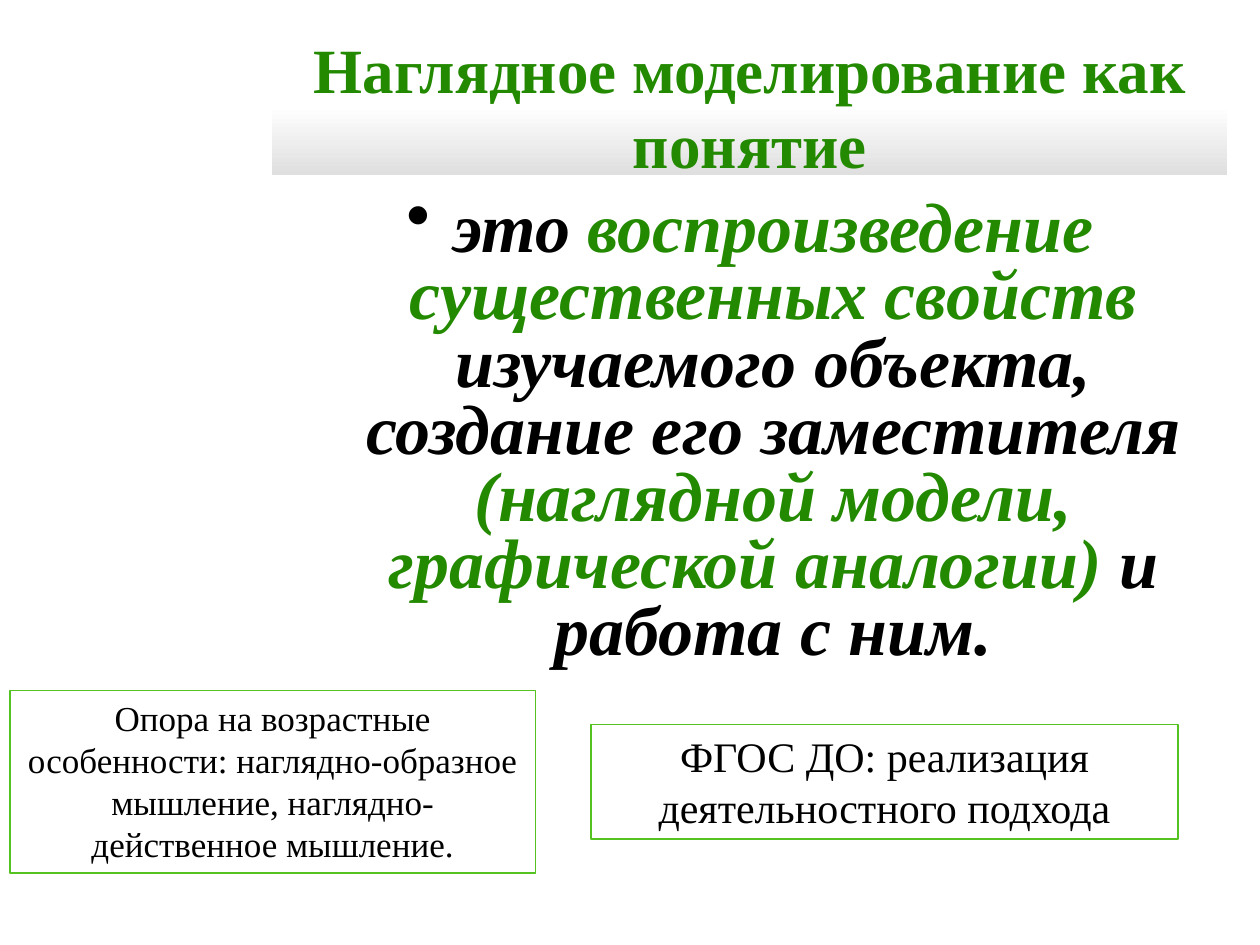
from dataclasses import dataclass

import pptx
import pptx.dml.color
import pptx.enum.shapes
import pptx.enum.text
import pptx.oxml
import pptx.oxml.ns
import pptx.util

Pt = pptx.util.Pt
RGB = pptx.dml.color.RGBColor.from_string
CENTER = pptx.enum.text.PP_ALIGN.CENTER
ANCHOR = pptx.enum.text.MSO_ANCHOR


@dataclass(frozen=True)
class Theme:
    font: str = "Times New Roman"
    ink: str = "000000"
    green: str = "238A00"
    border: str = "54C322"
    paper: str = "FFFFFF"
    shade: str = "DFDFDF"
    title: int = 36
    body: int = 40


THEME = Theme()


def style(r, size, color, bold=False, italic=False):
    r.font.name = THEME.font
    r.font.size = Pt(size)
    r.font.color.rgb = RGB(color)
    r.font.bold = bold
    r.font.italic = italic


def add_text_box(s, box, anchor):
    sp = s.shapes.add_textbox(*map(Pt, box))
    tf = sp.text_frame
    tf.word_wrap = True
    tf.vertical_anchor = anchor
    p = tf.paragraphs[0]
    p.alignment = CENTER
    return sp, p


def add_title(s, box, text):
    sp, p = add_text_box(s, box, ANCHOR.MIDDLE)
    p.text = text
    style(p.runs[0], THEME.title, THEME.green, bold=True)
    # White upper half, fading to grey at the bottom
    sp.fill.gradient()
    sp.fill.gradient_angle = 270
    stops = zip(sp.fill.gradient_stops, (0.5, 1), (THEME.paper, THEME.shade))
    for stop, position, color in stops:
        stop.position = position
        stop.color.rgb = RGB(color)


def add_definition(s, box, parts):
    sp, p = add_text_box(s, box, ANCHOR.TOP)
    p.line_spacing = 0.8
    # Hanging bullet
    pPr = p._p.get_or_add_pPr()
    pPr.set("marL", str(Pt(27)))
    pPr.set("indent", str(-Pt(27)))
    bullet = pptx.oxml.parse_xml(
        f'<a:buChar {pptx.oxml.ns.nsdecls("a")} char="•"/>')
    pPr.append(bullet)
    for text, color in parts:
        r = p.add_run()
        r.text = text
        style(r, THEME.body, color, bold=True, italic=True)


def add_note(s, box, text, size):
    sp = s.shapes.add_shape(
        pptx.enum.shapes.MSO_SHAPE.RECTANGLE, *map(Pt, box))
    sp.shadow.inherit = False
    sp.fill.solid()
    sp.fill.fore_color.rgb = RGB(THEME.paper)
    sp.line.color.rgb = RGB(THEME.border)
    sp.line.width = Pt(1)
    tf = sp.text_frame
    tf.word_wrap = True
    tf.auto_size = pptx.enum.text.MSO_AUTO_SIZE.SHAPE_TO_FIT_TEXT
    tf.vertical_anchor = ANCHOR.TOP
    p = tf.paragraphs[0]
    p.text = text
    p.alignment = CENTER
    style(p.runs[0], size, THEME.ink)


def main():
    prs = pptx.Presentation()
    prs.slide_width, prs.slide_height = Pt(720), Pt(540)
    s = prs.slides.add_slide(prs.slide_layouts[6])

    # Heading and definition share one column
    left, width = 155.5, 545.75
    add_title(s, (left, 20.9, width, 79.2),
              "Наглядное моделирование как понятие")
    add_definition(s, (left, 110.2, width, 232.5), [
        ("это ", THEME.ink),
        ("воспроизведение существенных свойств ", THEME.green),
        ("изучаемого объекта, создание его заместителя ", THEME.ink),
        ("(наглядной модели, графической аналогии) ", THEME.green),
        ("и работа с ним.", THEME.ink),
    ])

    # Framed notes
    add_note(s, (5.75, 394.6, 300.25, 104.4),
             "Опора на возрастные особенности: наглядно-образное мышление, "
             "наглядно-действенное мышление.", 20)
    add_note(s, (337.7, 414, 335.5, 65.5),
             "ФГОС ДО: реализация деятельностного подхода", 24)

    prs.save("out.pptx")


if __name__ == "__main__":
    main()
